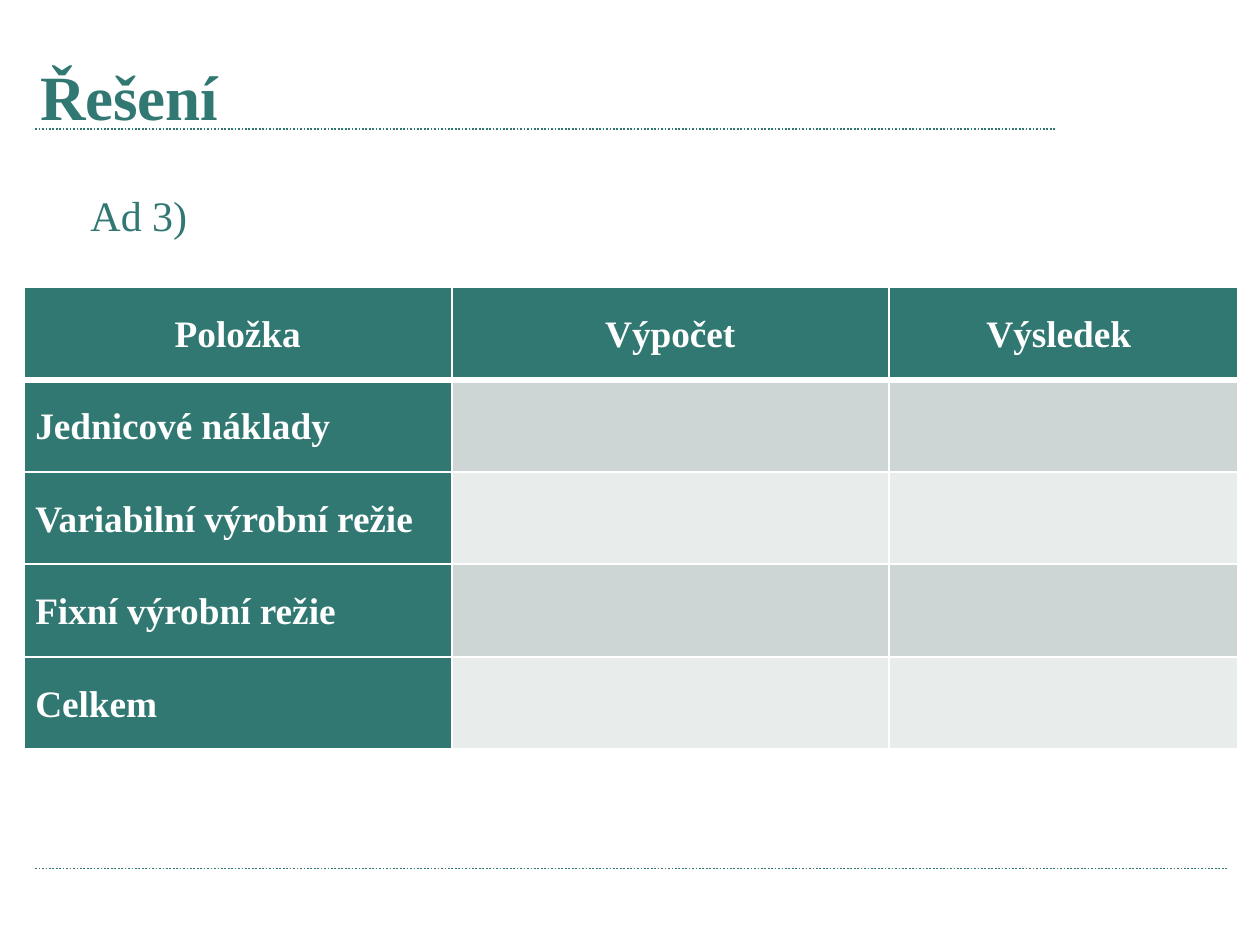
from lxml.etree import SubElement
from pptx import Presentation
from pptx.dml.color import RGBColor
from pptx.enum.dml import MSO_LINE
from pptx.enum.shapes import MSO_CONNECTOR
from pptx.enum.text import MSO_ANCHOR, PP_ALIGN
from pptx.oxml import parse_xml
from pptx.oxml.ns import nsdecls, qn
from pptx.util import Inches, Pt

TEAL = RGBColor(0x30, 0x78, 0x71)
BAND_DARK = RGBColor(0xCD, 0xD6, 0xD5)
BAND_LIGHT = RGBColor(0xE8, 0xEC, 0xEB)
WHITE = RGBColor(0xFF, 0xFF, 0xFF)

SLIDE_WIDTH = 7.5
HEADERS = ["Položka", "Výpočet", "Výsledek "]
ITEMS = ["Jednicové náklady", "Variabilní výrobní režie", "Fixní výrobní režie", "Celkem"]
COLUMN_WIDTHS = [2.55, 2.6, 2.08]
ROW_HEIGHT = 0.55


def write(tf, text, size=16, color=WHITE, bold=False, align=PP_ALIGN.LEFT, spacing=None):
    p = tf.paragraphs[0]
    p.alignment = align
    p.line_spacing = spacing
    r = p.add_run()
    r.text = text
    r.font.name = "Times New Roman"
    r.font.size = Pt(size)
    r.font.bold = bold
    r.font.color.rgb = color


def set_borders(cell, **widths):
    """Draw white borders; widths in points are keyed by side: L, R, T, B."""
    tcPr = cell._tc.get_or_add_tcPr()
    for i, side in enumerate("LRTB"):
        tcPr.insert(i, parse_xml(
            f'<a:ln{side} {nsdecls("a")} w="{Pt(widths.get(side, 1))}">'
            f'<a:solidFill><a:srgbClr val="{WHITE}"/></a:solidFill></a:ln{side}>'))


class SlideBuilder:
    def __init__(self, slide):
        self.s = slide

    def rule(self, x1, x2, y):
        line = self.s.shapes.add_connector(
            MSO_CONNECTOR.STRAIGHT, Inches(x1), Inches(y), Inches(x2), Inches(y))
        line.line.color.rgb = TEAL
        line.line.width = Pt(0.75)
        line.line.dash_style = MSO_LINE.ROUND_DOT
        SubElement(line._element.spPr, qn("a:effectLst"))

    def text(self, x, y, w, h, text, **style):
        sp = self.s.shapes.add_textbox(Inches(x), Inches(y), Inches(w), Inches(h))
        tf = sp.text_frame
        tf.word_wrap = True
        tf.vertical_anchor = MSO_ANCHOR.MIDDLE
        write(tf, text, color=TEAL, **style)

    def cell(self, cell, text, fill, align=PP_ALIGN.LEFT, **borders):
        cell.fill.solid()
        cell.fill.fore_color.rgb = fill
        cell.vertical_anchor = MSO_ANCHOR.MIDDLE
        cell.margin_left = cell.margin_right = Inches(0.07)
        cell.margin_top = cell.margin_bottom = 0
        if text:
            write(cell.text_frame, text, bold=True, align=align, spacing=1.07)
        set_borders(cell, **borders)

    def cost_table(self, x, y):
        n_rows = len(ITEMS) + 1
        table = self.s.shapes.add_table(
            n_rows, len(HEADERS), Inches(x), Inches(y),
            Inches(sum(COLUMN_WIDTHS)), Inches(n_rows * ROW_HEIGHT)).table
        for column, width in zip(table.columns, COLUMN_WIDTHS):
            column.width = Inches(width)
        for row in table.rows:
            row.height = Inches(ROW_HEIGHT)
        for c, header in enumerate(HEADERS):
            self.cell(table.cell(0, c), header, TEAL, PP_ALIGN.CENTER, B=3)
        for r, item in enumerate(ITEMS, start=1):
            band = BAND_DARK if r % 2 else BAND_LIGHT
            top = 3 if r == 1 else 1
            self.cell(table.cell(r, 0), item, TEAL, T=top)
            for c in range(1, len(HEADERS)):
                self.cell(table.cell(r, c), "", band, T=top)


def main():
    prs = Presentation()
    prs.slide_width = Inches(SLIDE_WIDTH)
    prs.slide_height = Inches(SLIDE_WIDTH * 3 / 4)
    b = SlideBuilder(prs.slides.add_slide(prs.slide_layouts[6]))
    b.rule(0.21, 6.29, 0.77)
    b.rule(0.21, 7.31, 5.17)
    b.text(0.14, 0.27, 6.61, 0.59, "Řešení", size=27, bold=True)
    b.cost_table(0.14, 1.71)
    b.text(0.44, 1.08, 1.42, 0.4, "Ad 3)", size=18)
    prs.save("out.pptx")


if __name__ == "__main__":
    main()
